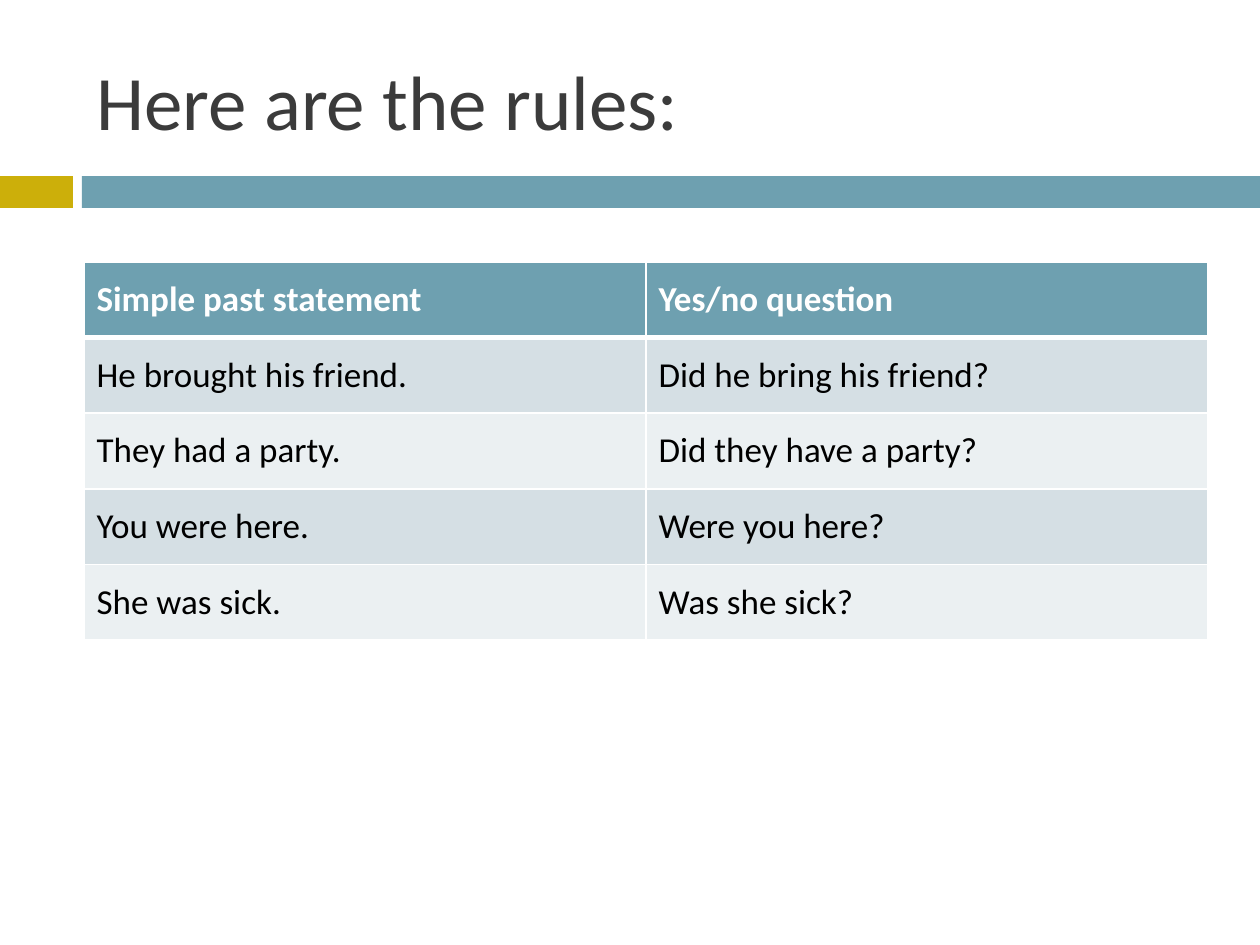
from lxml import etree
from pptx import Presentation
from pptx.dml.color import RGBColor
from pptx.enum.shapes import MSO_SHAPE
from pptx.enum.text import MSO_ANCHOR
from pptx.oxml.ns import qn
from pptx.util import Emu, Pt

RECTANGLE = MSO_SHAPE.RECTANGLE
MIDDLE = MSO_ANCHOR.MIDDLE
PX_PER_INCH = 126
FONT = "Calibri"
TEAL, GOLD, WHITE = "6EA0B0", "CCAF0A", "FFFFFF"
ROW_BANDS = ("EBF0F2", "D5DFE4")
RULES = [
    ("Simple past statement", "Yes/no question"),
    ("He brought his friend.", "Did he bring his friend?"),
    ("They had a party.", "Did they have a party?"),
    ("You were here.", "Were you here?"),
    ("She was sick.", "Was she sick?"),
]


def px(length):
    """Turn whole pixels into EMU."""
    return Emu(round(length * 914400 / PX_PER_INCH))


def color(hex_value):
    """Turn a hex string into a colour."""
    return RGBColor.from_string(hex_value)


def write(frame, text, *, size, ink, bold=False):
    """Write one formatted line into a text frame."""
    frame.word_wrap = True
    run = frame.paragraphs[0].add_run()
    run.text = text
    run.font.name = FONT
    run.font.size = Pt(size)
    run.font.bold = bold
    run.font.color.rgb = color(ink)


def add_bar(slide, left, top, width, height, fill):
    """Add a plain bar without outline."""
    bar = slide.shapes.add_shape(RECTANGLE, px(left), px(top), px(width), px(height))
    bar.shadow.inherit = False
    bar.fill.solid()
    bar.fill.fore_color.rgb = color(fill)
    bar.line.fill.background()


def add_title(slide, text, left, top, width, height):
    """Add the slide heading."""
    heading = slide.shapes.add_textbox(px(left), px(top), px(width), px(height))
    heading.text_frame.vertical_anchor = MIDDLE
    write(heading.text_frame, text, size=44, ink="3B3B3B")


def set_borders(cell, **widths):
    """Draw white cell borders, with widths in points by side."""
    properties = cell._tc.get_or_add_tcPr()
    for side in "LRTB":
        border = etree.SubElement(
            properties, qn(f"a:ln{side}"), w=str(Pt(widths.get(side, 1)))
        )
        fill = etree.SubElement(border, qn("a:solidFill"))
        etree.SubElement(fill, qn("a:srgbClr"), val=WHITE)


def add_rules_table(slide, rules, left, top, width, height):
    """Add the table with a teal header and banded rows."""
    frame = slide.shapes.add_table(
        len(rules), len(rules[0]), px(left), px(top), px(width), px(height)
    )
    for row, sentences in enumerate(rules):
        is_header = row == 0
        for column, sentence in enumerate(sentences):
            cell = frame.table.cell(row, column)
            cell.vertical_anchor = MIDDLE
            set_borders(cell, T=3 if row == 1 else 1, B=3 if is_header else 1)
            cell.fill.solid()
            cell.fill.fore_color.rgb = color(TEAL if is_header else ROW_BANDS[row % 2])
            write(
                cell.text_frame,
                sentence,
                size=20,
                ink=WHITE if is_header else "000000",
                bold=is_header,
            )


def main():
    """Build and save the slide."""
    deck = Presentation()
    deck.slide_width, deck.slide_height = px(1260), px(945)
    slide = deck.slides.add_slide(deck.slide_layouts[6])
    add_bar(slide, 0, 176, 73, 32, GOLD)
    add_bar(slide, 82, 176, 1178, 32, TEAL)
    add_title(slide, "Here are the rules:", 84, 32, 1124, 136)
    add_rules_table(slide, RULES, 84, 262, 1124, 378)
    deck.save("out.pptx")


if __name__ == "__main__":
    main()
